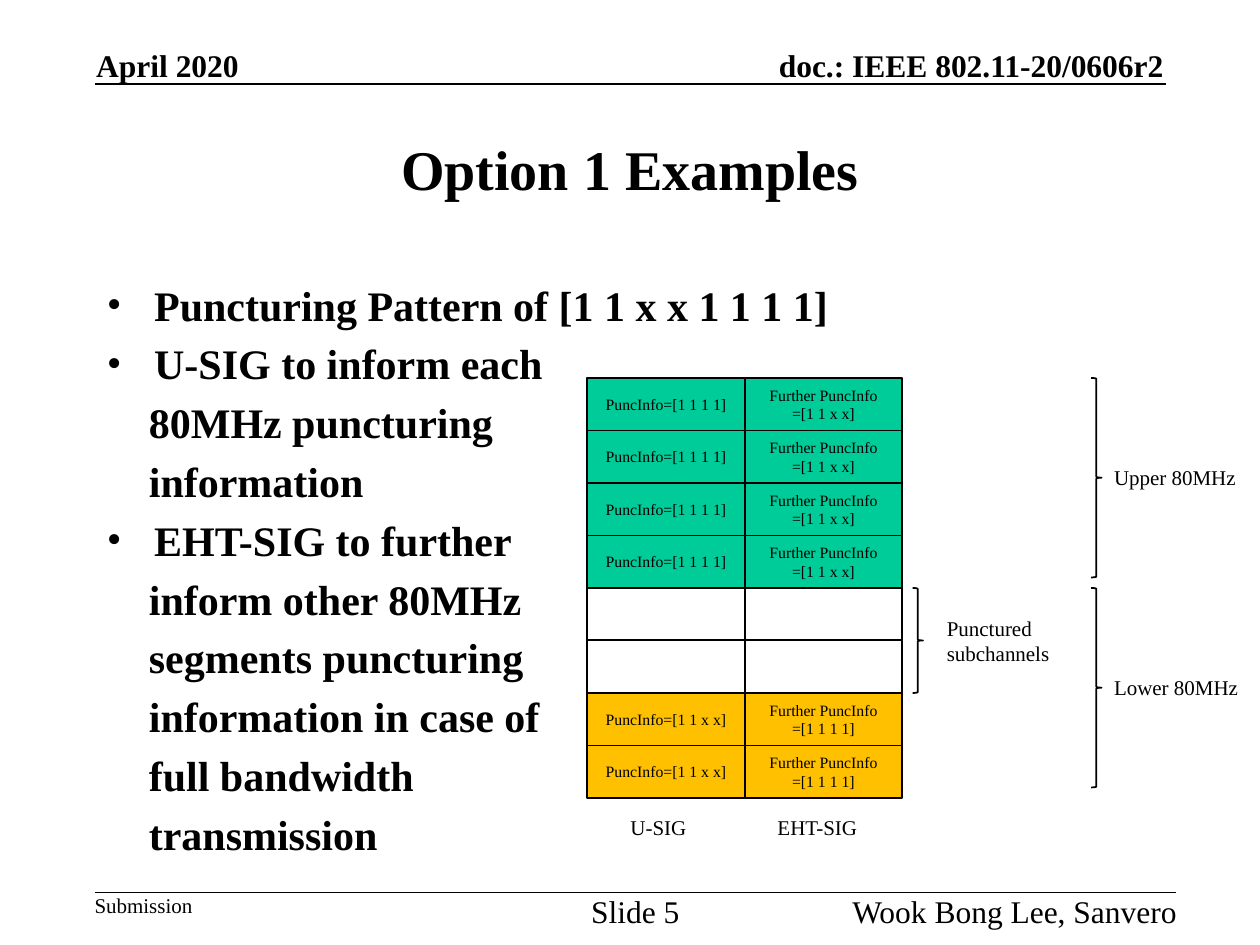
from dataclasses import dataclass

from lxml.etree import SubElement
from pptx import Presentation
from pptx.dml.color import RGBColor
from pptx.enum.shapes import MSO_CONNECTOR, MSO_SHAPE
from pptx.enum.text import MSO_ANCHOR, PP_ALIGN
from pptx.oxml.ns import qn
from pptx.shapes.base import BaseShape
from pptx.slide import Slide
from pptx.text.text import TextFrame, _Paragraph
from pptx.util import Pt


@dataclass(frozen=True)
class Theme:
    font: str = "Times New Roman"
    ink: RGBColor = RGBColor(0, 0, 0)
    green: RGBColor = RGBColor(0x00, 0xCC, 0x99)
    amber: RGBColor = RGBColor(0xFF, 0xC0, 0x00)
    title_size: float = 32
    body_size: float = 24
    header_size: float = 18
    label_size: float = 12
    cell_size: float = 9
    line_width: float = 1


THEME = Theme()


@dataclass(frozen=True)
class Box:
    left: float
    top: float
    width: float
    height: float

    def place(self, shape: BaseShape) -> None:
        shape.left, shape.top, shape.width, shape.height = self.lengths()

    def lengths(self) -> tuple[Pt, Pt, Pt, Pt]:
        return Pt(self.left), Pt(self.top), Pt(self.width), Pt(self.height)


@dataclass(frozen=True)
class MarginText:
    text: str
    box: Box
    align: PP_ALIGN
    size: float = THEME.header_size
    bold: bool = False
    anchor: MSO_ANCHOR = MSO_ANCHOR.TOP


@dataclass(frozen=True)
class Label:
    text: str
    box: Box


@dataclass(frozen=True)
class Subchannel:
    fill: RGBColor | None = None
    first_info: str = ""
    further_info: str = ""


MARGIN_TEXTS = [
    MarginText("doc.: IEEE 802.11-20/0606r2", Box(406.5, 26.5, 258.5, 21.5),
               PP_ALIGN.RIGHT, bold=True, anchor=MSO_ANCHOR.BOTTOM),
    MarginText("April 2020", Box(55, 26.5, 90, 21.5),
               PP_ALIGN.LEFT, bold=True, anchor=MSO_ANCHOR.BOTTOM),
    MarginText("Submission", Box(54, 510, 65, 14.5), PP_ALIGN.LEFT, THEME.label_size),
    MarginText("Slide 5", Box(328, 510, 70, 21.5), PP_ALIGN.CENTER),
    MarginText("Wook Bong Lee, Sanvero", Box(452.5, 510, 220, 21.5), PP_ALIGN.RIGHT),
]

BULLETS = [
    ["Puncturing Pattern of [1 1 x x 1 1 1 1]"],
    ["U-SIG to inform each", "80MHz puncturing", "information"],
    ["EHT-SIG to further", "inform other 80MHz", "segments puncturing",
     "information in case of", "full bandwidth", "transmission"],
]

UPPER = Subchannel(THEME.green, "PuncInfo=[1 1 1 1]", "Further PuncInfo\n=[1 1 x x]")
PUNCTURED = Subchannel()
LOWER = Subchannel(THEME.amber, "PuncInfo=[1 1 x x]", "Further PuncInfo\n=[1 1 1 1]")
SUBCHANNELS = [UPPER] * 4 + [PUNCTURED] * 2 + [LOWER] * 2

GRID_LEFT, GRID_TOP = 335.5, 216
CELL_WIDTH, CELL_HEIGHT = 90, 30
BRACE_WIDTH = 6

BRACES = [
    Box(521.5, GRID_TOP + 4 * CELL_HEIGHT, BRACE_WIDTH, 2 * CELL_HEIGHT),
    Box(623.5, GRID_TOP, BRACE_WIDTH, 114),
    Box(623.5, GRID_TOP + 4 * CELL_HEIGHT, BRACE_WIDTH, 114),
]

LABELS = [
    Label("U-SIG", Box(353.2, 462, 52.6, 21.8)),
    Label("EHT-SIG", Box(437.2, 462, 66.2, 21.8)),
    Label("Punctured\nsubchannels", Box(534, 347.9, 77, 36.3)),
    Label("Upper 80MHz", Box(629.5, 262.1, 90.5, 21.8)),
    Label("Lower 80MHz", Box(629.5, 382.1, 90.5, 21.8)),
]


def format_text(frame: TextFrame, size: float, align: PP_ALIGN, bold: bool = False) -> None:
    for paragraph in frame.paragraphs:
        paragraph.alignment = align
        for run in paragraph.runs:
            run.font.name = THEME.font
            run.font.size = Pt(size)
            run.font.bold = bold
            run.font.color.rgb = THEME.ink


def set_insets(frame: TextFrame, horizontal: float, vertical: float) -> None:
    frame.margin_left = frame.margin_right = Pt(horizontal)
    frame.margin_top = frame.margin_bottom = Pt(vertical)


def add_title(slide: Slide, text: str) -> None:
    title = slide.shapes.title
    Box(54, 54, 612, 84).place(title)
    title.text_frame.text = text
    title.text_frame.vertical_anchor = MSO_ANCHOR.MIDDLE
    format_text(title.text_frame, THEME.title_size, PP_ALIGN.CENTER, bold=True)


def add_margin_text(slide: Slide, item: MarginText) -> None:
    frame = slide.shapes.add_textbox(*item.box.lengths()).text_frame
    frame.text = item.text
    frame.word_wrap = True
    frame.vertical_anchor = item.anchor
    set_insets(frame, 0, 0)
    format_text(frame, item.size, item.align, item.bold)


def add_rule(slide: Slide, left: float, right: float, top: float) -> None:
    rule = slide.shapes.add_connector(
        MSO_CONNECTOR.STRAIGHT, Pt(left), Pt(top), Pt(right), Pt(top))
    rule.line.color.rgb = THEME.ink
    rule.line.width = Pt(THEME.line_width)
    SubElement(rule._element.spPr, qn("a:effectLst"))


def set_indent(paragraph: _Paragraph, left: float, bulleted: bool) -> None:
    properties = paragraph._p.get_or_add_pPr()
    properties.set("marL", str(Pt(left)))
    properties.set("indent", str(Pt(-left) if bulleted else 0))
    if bulleted:
        SubElement(properties, qn("a:buFont"), typeface=THEME.font)
        SubElement(properties, qn("a:buChar"), char="•")
    else:
        SubElement(properties, qn("a:buNone"))


def add_bullets(slide: Slide, box: Box) -> None:
    frame = slide.shapes.add_textbox(*box.lengths()).text_frame
    frame.word_wrap = True
    frame.text = "\n".join(line for bullet in BULLETS for line in bullet)
    starts = [index == 0 for bullet in BULLETS for index in range(len(bullet))]
    for position, (paragraph, bulleted) in enumerate(zip(frame.paragraphs, starts)):
        set_indent(paragraph, 27 if bulleted else 24, bulleted)
        paragraph.space_before = Pt(4.8 if position else 0)
    format_text(frame, THEME.body_size, PP_ALIGN.LEFT, bold=True)


def add_outlined(slide: Slide, kind: MSO_SHAPE, box: Box,
                 fill: RGBColor | None = None) -> BaseShape:
    shape = slide.shapes.add_shape(kind, *box.lengths())
    shape.shadow.inherit = False
    shape.line.color.rgb = THEME.ink
    shape.line.width = Pt(THEME.line_width)
    if fill is None:
        shape.fill.background()
    else:
        shape.fill.solid()
        shape.fill.fore_color.rgb = fill
    return shape


def add_grid(slide: Slide) -> None:
    for row, subchannel in enumerate(SUBCHANNELS):
        for column, text in enumerate((subchannel.first_info, subchannel.further_info)):
            box = Box(GRID_LEFT + column * CELL_WIDTH, GRID_TOP + row * CELL_HEIGHT,
                      CELL_WIDTH, CELL_HEIGHT)
            cell = add_outlined(slide, MSO_SHAPE.RECTANGLE, box, subchannel.fill)
            frame = cell.text_frame
            frame.text = text
            frame.vertical_anchor = MSO_ANCHOR.MIDDLE
            set_insets(frame, 7.2, 3.6)
            format_text(frame, THEME.cell_size, PP_ALIGN.CENTER)


def add_label(slide: Slide, label: Label) -> None:
    frame = slide.shapes.add_textbox(*label.box.lengths()).text_frame
    frame.word_wrap = True
    frame.text = label.text
    format_text(frame, THEME.label_size, PP_ALIGN.LEFT)


def main() -> None:
    presentation = Presentation()
    presentation.slide_width, presentation.slide_height = Pt(720), Pt(540)
    slide = presentation.slides.add_slide(presentation.slide_layouts[5])
    add_title(slide, "Option 1 Examples")
    add_rule(slide, 54, 666, 48)
    add_rule(slide, 54, 672, 510)
    for item in MARGIN_TEXTS:
        add_margin_text(slide, item)
    add_bullets(slide, Box(54, 156, 612, 324))
    add_grid(slide)
    for brace in BRACES:
        add_outlined(slide, MSO_SHAPE.RIGHT_BRACE, brace)
    for label in LABELS:
        add_label(slide, label)
    presentation.save("out.pptx")


if __name__ == "__main__":
    main()
